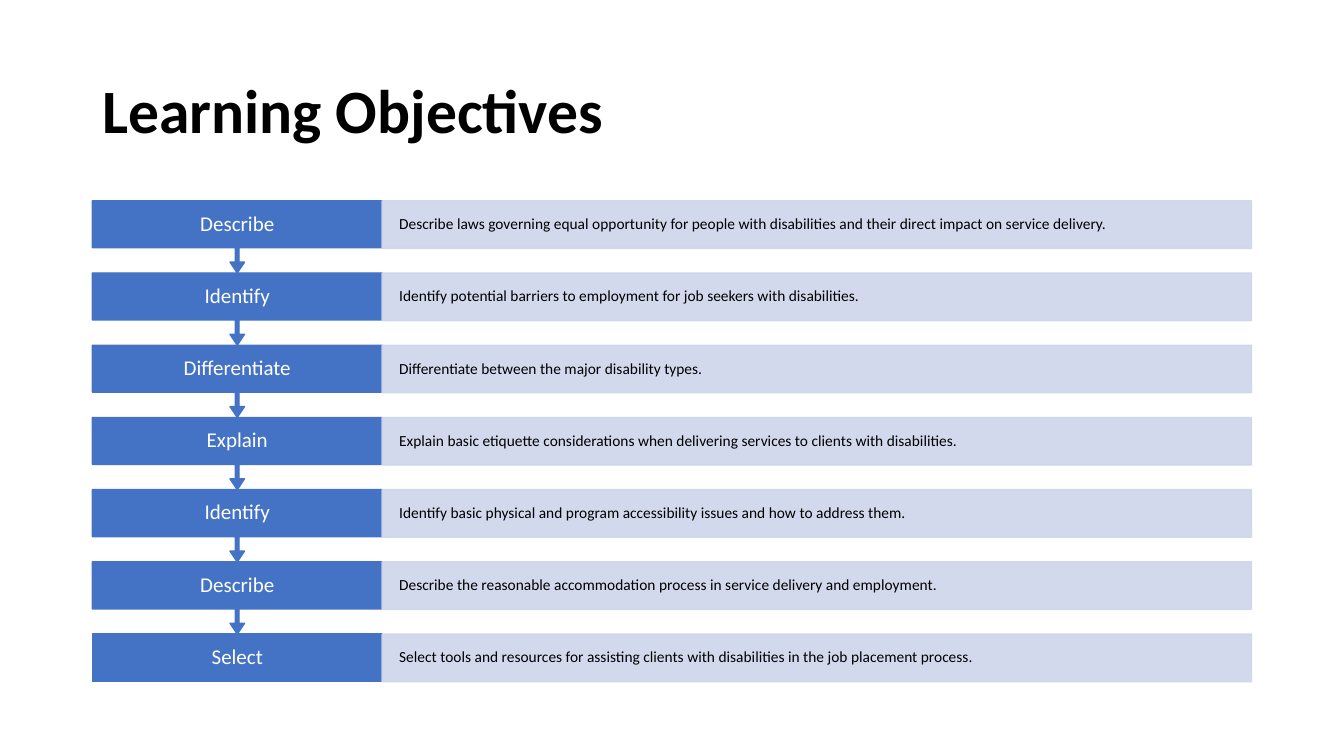
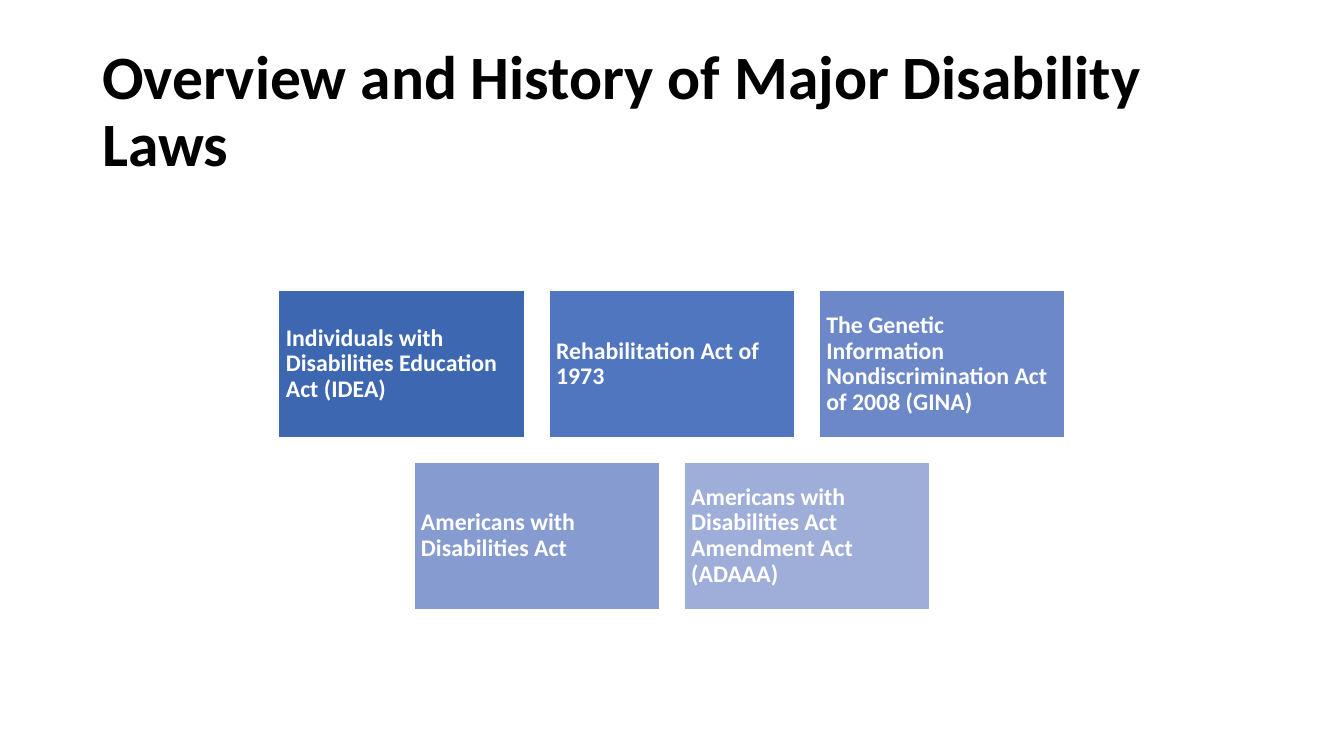
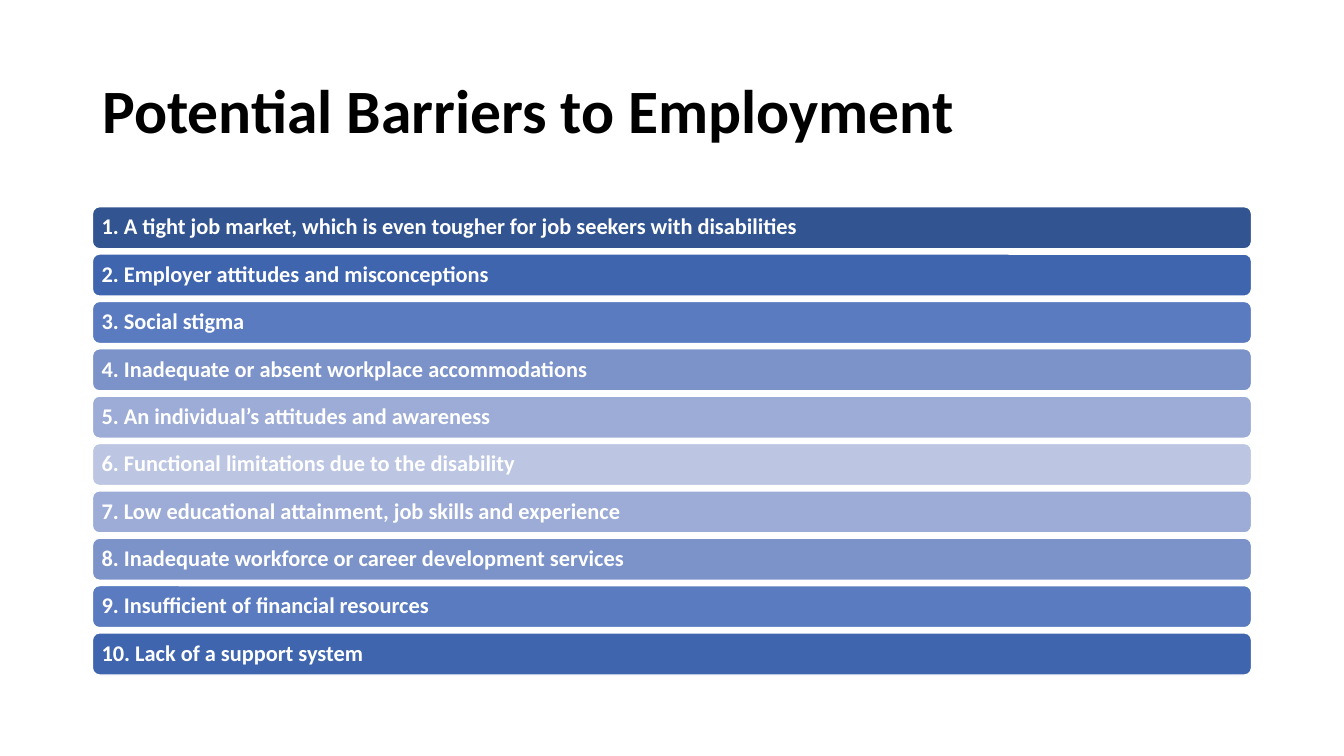
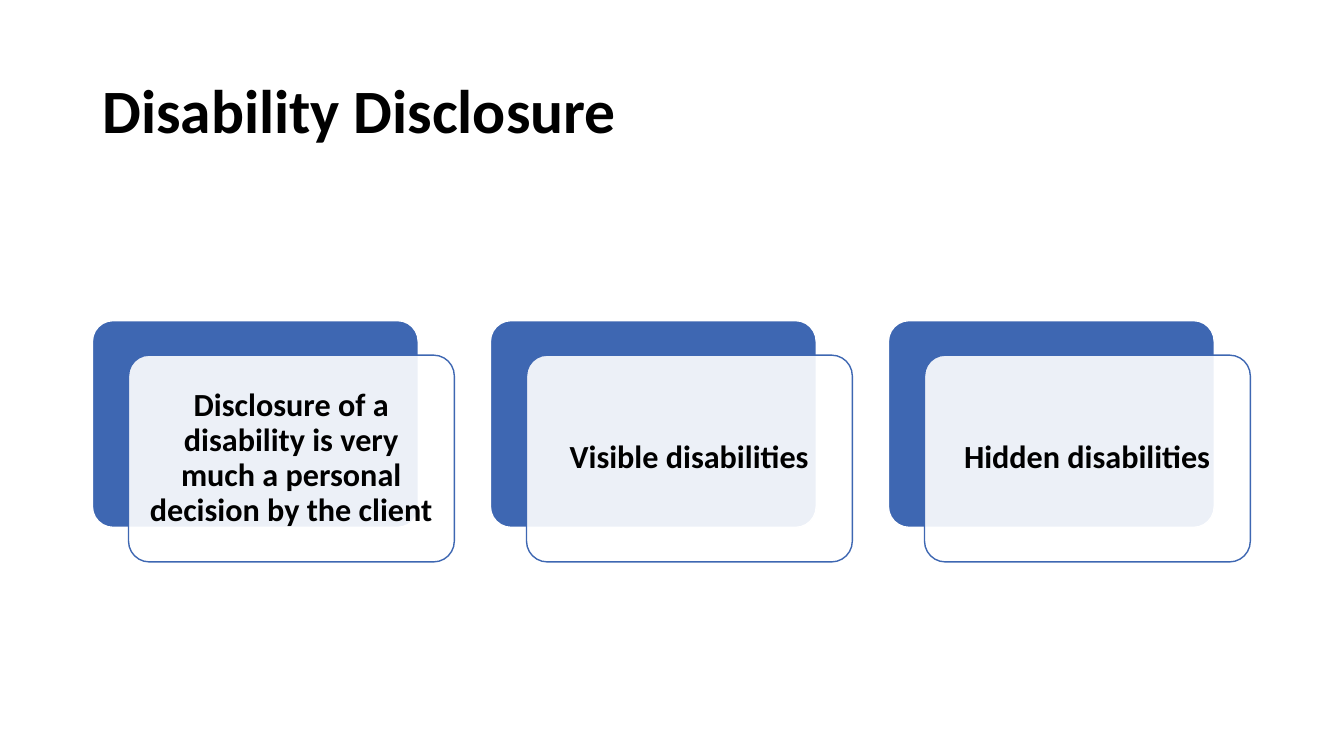
"""Build four slides on disability laws, barriers and disclosure."""
import pptx
import pptx.util
import pptx.dml.color
import pptx.enum.shapes
import pptx.enum.text
import pptx.oxml.ns
import lxml.etree

Cm = pptx.util.Cm
RGB = pptx.dml.color.RGBColor
KIND = pptx.enum.shapes.MSO_SHAPE
ALIGN = pptx.enum.text.PP_ALIGN

FONT = "Calibri"
BLACK = RGB(0x00, 0x00, 0x00)
WHITE = RGB(0xFF, 0xFF, 0xFF)
BLUE = RGB(0x44, 0x72, 0xC4)
DEEP = RGB(0x3E, 0x67, 0xB2)
PALE = RGB(0xCF, 0xD5, 0xEA)
LEFT = 2.33
WIDE = 29.21


def write(shape, text, size, color, bold=True, align=ALIGN.LEFT, inset=(0.25, 0.13)):
    """Set the text of a shape in the shared style."""
    frame = shape.text_frame
    frame.text = text
    frame.word_wrap = True
    frame.vertical_anchor = pptx.enum.text.MSO_ANCHOR.MIDDLE
    frame.margin_left = frame.margin_right = Cm(inset[0])
    frame.margin_top = frame.margin_bottom = Cm(inset[1])
    para = frame.paragraphs[0]
    para.alignment = align
    para.line_spacing = 0.9
    font = para.runs[0].font
    font.name = FONT
    font.size = pptx.util.Pt(size)
    font.bold = bold
    font.color.rgb = color


def draw(slide, kind, left, top, width, height, fill, line, clear=0):
    """Add a filled shape; the first `clear` colours become 90 % opaque."""
    shape = slide.shapes.add_shape(kind, Cm(left), Cm(top), Cm(width), Cm(height))
    shape.shadow.inherit = False
    shape.fill.solid()
    shape.fill.fore_color.rgb = fill
    shape.line.color.rgb = line
    shape.line.width = pptx.util.Pt(1)
    for node in shape._element.xpath("./p:spPr//a:srgbClr")[:clear]:
        lxml.etree.SubElement(node, pptx.oxml.ns.qn("a:alpha"), val="90000")
    return shape


deck = pptx.Presentation()
deck.slide_width = Cm(33.87)
deck.slide_height = Cm(19.05)

titles = [
    "Learning Objectives",
    "Overview and History of Major Disability Laws",
    "Potential Barriers to Employment",
    "Disability Disclosure",
]
slides = []
for title in titles:
    slide = deck.slides.add_slide(deck.slide_layouts[6])
    head = slide.shapes.add_textbox(Cm(LEFT), Cm(1.01), Cm(WIDE), Cm(3.68))
    write(head, title, 44, BLACK)
    slides.append(slide)
goals, laws, bars, cards = slides

steps = [
    ("Describe", "Describe laws governing equal opportunity for people with disabilities and their direct impact on service delivery."),
    ("Identify", "Identify potential barriers to employment for job seekers with disabilities."),
    ("Differentiate", "Differentiate between the major disability types."),
    ("Explain", "Explain basic etiquette considerations when delivering services to clients with disabilities."),
    ("Identify", "Identify basic physical and program accessibility issues and how to address them."),
    ("Describe", "Describe the reasonable accommodation process in service delivery and employment."),
    ("Select", "Select tools and resources for assisting clients with disabilities in the job placement process."),
]
pitch = 1.82
for row, (verb, detail) in enumerate(steps):
    top = 5.06 + row * pitch
    if row < len(steps) - 1:
        label = draw(goals, KIND.DOWN_ARROW_CALLOUT, LEFT, top, 7.3, pitch, BLUE, BLUE)
        for spot, value in enumerate((0.05, 0.1, 0.15, 0.65)):
            label.adjustments[spot] = value
    else:
        label = draw(goals, KIND.RECTANGLE, LEFT, top, 7.3, 1.2, BLUE, BLUE)
    write(label, verb, 15, WHITE, False, ALIGN.CENTER, (0.5, 0.3))
    note = draw(goals, KIND.RECTANGLE, LEFT + 7.3, top, WIDE - 7.3, 1.2, PALE, PALE, 2)
    write(note, detail, 11, BLACK, False, inset=(0.43, 0.38))

acts = [
    [
        ("Individuals with Disabilities Education Act (IDEA)", DEEP),
        ("Rehabilitation Act of 1973", RGB(0x51, 0x76, 0xC0)),
        ("The Genetic Information Nondiscrimination Act of 2008 (GINA)", RGB(0x6C, 0x88, 0xC8)),
    ],
    [
        ("Americans with Disabilities Act", RGB(0x86, 0x9B, 0xD0)),
        ("Americans with Disabilities Act Amendment Act (ADAAA)", RGB(0x9F, 0xAE, 0xD8)),
    ],
]
width, height, gap = 6.2, 3.72, 0.61
for row, group in enumerate(acts):
    start = LEFT + (WIDE - len(group) * (width + gap) + gap) / 2
    for col, (act, fill) in enumerate(group):
        left = start + col * (width + gap)
        tile = draw(laws, KIND.RECTANGLE, left, 7.32 + row * (height + gap), width, height, fill, WHITE)
        write(tile, act, 17, WHITE, inset=(0.18, 0.18))

blocks = [
    "A tight job market, which is even tougher for job seekers with disabilities",
    "Employer attitudes and misconceptions",
    "Social stigma",
    "Inadequate or absent workplace accommodations",
    "An individual’s attitudes and awareness",
    "Functional limitations due to the disability",
    "Low educational attainment, job skills and experience",
    "Inadequate workforce or career development services",
    "Insufficient of financial resources",
    "Lack of a support system",
]
shades = [
    RGB(0x32, 0x54, 0x91),
    RGB(0x40, 0x65, 0xAF),
    RGB(0x5B, 0x7B, 0xC0),
    RGB(0x7C, 0x93, 0xCA),
    RGB(0x9D, 0xAC, 0xD6),
    RGB(0xBC, 0xC6, 0xE2),
]
shades += shades[4:0:-1]
for row, (block, shade) in enumerate(zip(blocks, shades)):
    top = 5.21 + row * 10.74 / (len(blocks) - 1)
    bar = draw(bars, KIND.ROUNDED_RECTANGLE, LEFT, top, WIDE, 1.06, shade, WHITE)
    write(bar, f"{row + 1}. {block}", 16, WHITE, inset=(0.18, 0.18))

points = [
    "Disclosure of a disability is very much a personal decision by the client",
    "Visible disabilities",
    "Hidden disabilities",
]
for col, point in enumerate(points):
    left = LEFT + col * 10.03
    back = draw(cards, KIND.ROUNDED_RECTANGLE, left, 8.08, 8.21, 5.21, DEEP, WHITE)
    front = draw(cards, KIND.ROUNDED_RECTANGLE, left + 0.91, 8.95, 8.21, 5.21, WHITE, DEEP, 1)
    back.adjustments[0] = front.adjustments[0] = 0.1
    write(front, point, 23, BLACK, align=ALIGN.CENTER, inset=(0.25, 0.25))

deck.save("out.pptx")
